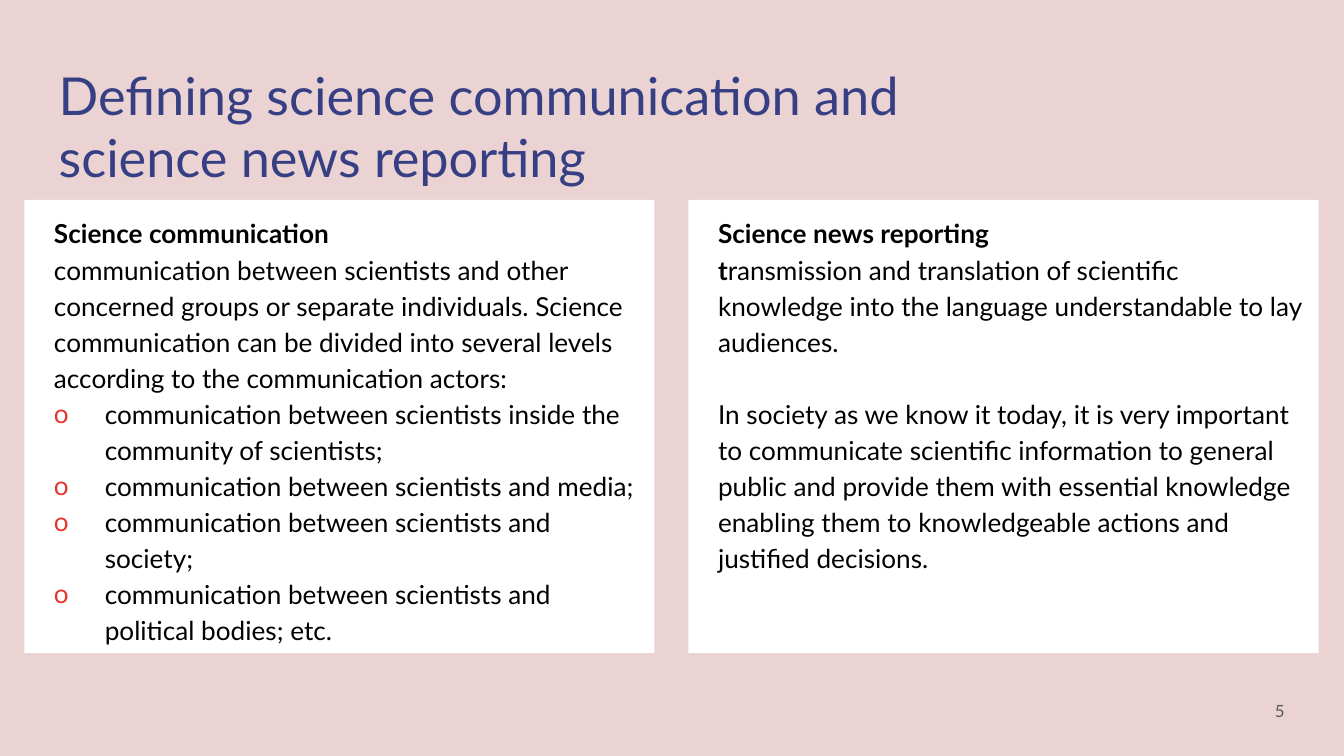
from lxml import etree
from pptx import Presentation
from pptx.dml.color import RGBColor
from pptx.enum.text import MSO_ANCHOR, MSO_AUTO_SIZE, PP_ALIGN
from pptx.oxml.ns import qn
from pptx.util import Cm, Pt

TOP, MIDDLE = MSO_ANCHOR.TOP, MSO_ANCHOR.MIDDLE
LEFT, RIGHT = PP_ALIGN.LEFT, PP_ALIGN.RIGHT
NO_AUTOFIT = MSO_AUTO_SIZE.NONE

PINK = RGBColor(0xEB, 0xD3, 0xD3)
WHITE = RGBColor(0xFF, 0xFF, 0xFF)
BLACK = RGBColor(0x00, 0x00, 0x00)
NAVY = RGBColor(0x36, 0x3F, 0x83)
RED = RGBColor(0xE5, 0x36, 0x2B)
GREY = RGBColor(0x59, 0x59, 0x59)
FONT = "Lato"
BODY_SIZE = 14
LINE_SPACING = 1.15
BLANK_LINE = Pt(19.3)
TWO_CONTENT_LAYOUT = 3

PANEL_TOP, PANEL_WIDTH, PANEL_HEIGHT = Cm(3.78), Cm(11.91), Cm(8.56)
PANEL_LEFT, PANEL_STEP = Cm(0.46), Cm(12.55)

# Each paragraph: style, then runs of (text, bold)
COMMUNICATION = [
    ("plain", [("Science communication", True)]),
    ("plain", [("communication between scientists and other concerned groups or "
                "separate individuals. Science communication can be divided into "
                "several levels according to the communication actors:", False)]),
] + [
    ("bullet", [(f"communication between scientists {partner}", False)])
    for partner in ("inside the community of scientists;", "and media;",
                    "and society;", "and political bodies; etc.")
]
REPORTING = [
    ("plain", [("Science news reporting", True)]),
    ("plain", [("t", True),
               ("ransmission and translation of scientific knowledge into the "
                "language understandable to lay audiences.", False)]),
    ("spaced", [("In society as we know it today, it is very important to "
                 "communicate scientific information to general public and provide "
                 "them with essential knowledge enabling them to knowledgeable "
                 "actions and justified decisions.", False)]),
]


def place(shape, box):
    shape.left, shape.top, shape.width, shape.height = box


def prepare_frame(shape, anchor):
    frame = shape.text_frame
    frame.word_wrap = True
    frame.auto_size = NO_AUTOFIT
    frame.vertical_anchor = anchor
    frame.margin_left = frame.margin_right = Cm(0.25)
    frame.margin_top = frame.margin_bottom = Cm(0.25)
    return frame


def add_span(para, text, size, color, bold=False):
    span = para.add_run()
    span.text = text
    span.font.name = FONT
    span.font.size = Pt(size)
    span.font.bold = bold
    span.font.color.rgb = color


def set_bullet(para, bulleted):
    properties = para._p.get_or_add_pPr()
    margin, indent = (Cm(1.27), Cm(-0.96)) if bulleted else (Cm(0.31), Cm(0))
    properties.set("marL", str(margin))
    properties.set("indent", str(indent))
    if bulleted:
        color = etree.SubElement(properties, qn("a:buClr"))
        etree.SubElement(color, qn("a:srgbClr"), val=str(RED))
        etree.SubElement(properties, qn("a:buFont"), typeface=FONT)
        etree.SubElement(properties, qn("a:buChar"), char="o")
    else:
        etree.SubElement(properties, qn("a:buNone"))


def fill_title(title, box):
    place(title, box)
    para = prepare_frame(title, TOP).paragraphs[0]
    para.alignment = LEFT
    add_span(para, "Defining science communication and science news reporting", 28, NAVY)


def fill_panel(panel, box, content):
    place(panel, box)
    panel.fill.solid()
    panel.fill.fore_color.rgb = WHITE
    frame = prepare_frame(panel, TOP)
    for index, (style, spans) in enumerate(content):
        para = frame.add_paragraph() if index else frame.paragraphs[0]
        para.alignment = LEFT
        para.line_spacing = LINE_SPACING
        para.space_before = BLANK_LINE if style == "spaced" else Pt(0)
        para.space_after = Pt(0)
        set_bullet(para, style == "bullet")
        for text, bold in spans:
            add_span(para, text, BODY_SIZE, BLACK, bold)


def add_page_number(page, box):
    number = page.shapes.add_textbox(*box)
    para = prepare_frame(number, MIDDLE).paragraphs[0]
    para.alignment = RIGHT
    add_span(para, "5", 9, GREY)


def main():
    deck = Presentation()
    deck.slide_width, deck.slide_height = Cm(25.4), Cm(14.29)
    page = deck.slides.add_slide(deck.slide_layouts[TWO_CONTENT_LAYOUT])
    page.background.fill.solid()
    page.background.fill.fore_color.rgb = PINK

    # Title
    fill_title(page.shapes.title, (Cm(0.86), Cm(0.94), Cm(18.9), Cm(1.6)))

    # Two definition panels side by side
    for column, content in enumerate((COMMUNICATION, REPORTING)):
        box = (PANEL_LEFT + column * PANEL_STEP, PANEL_TOP, PANEL_WIDTH, PANEL_HEIGHT)
        fill_panel(page.placeholders[column + 1], box, content)

    # Page number
    add_page_number(page, (Cm(23.01), Cm(12.9), Cm(1.52), Cm(1.09)))

    deck.save("out.pptx")


if __name__ == "__main__":
    main()
